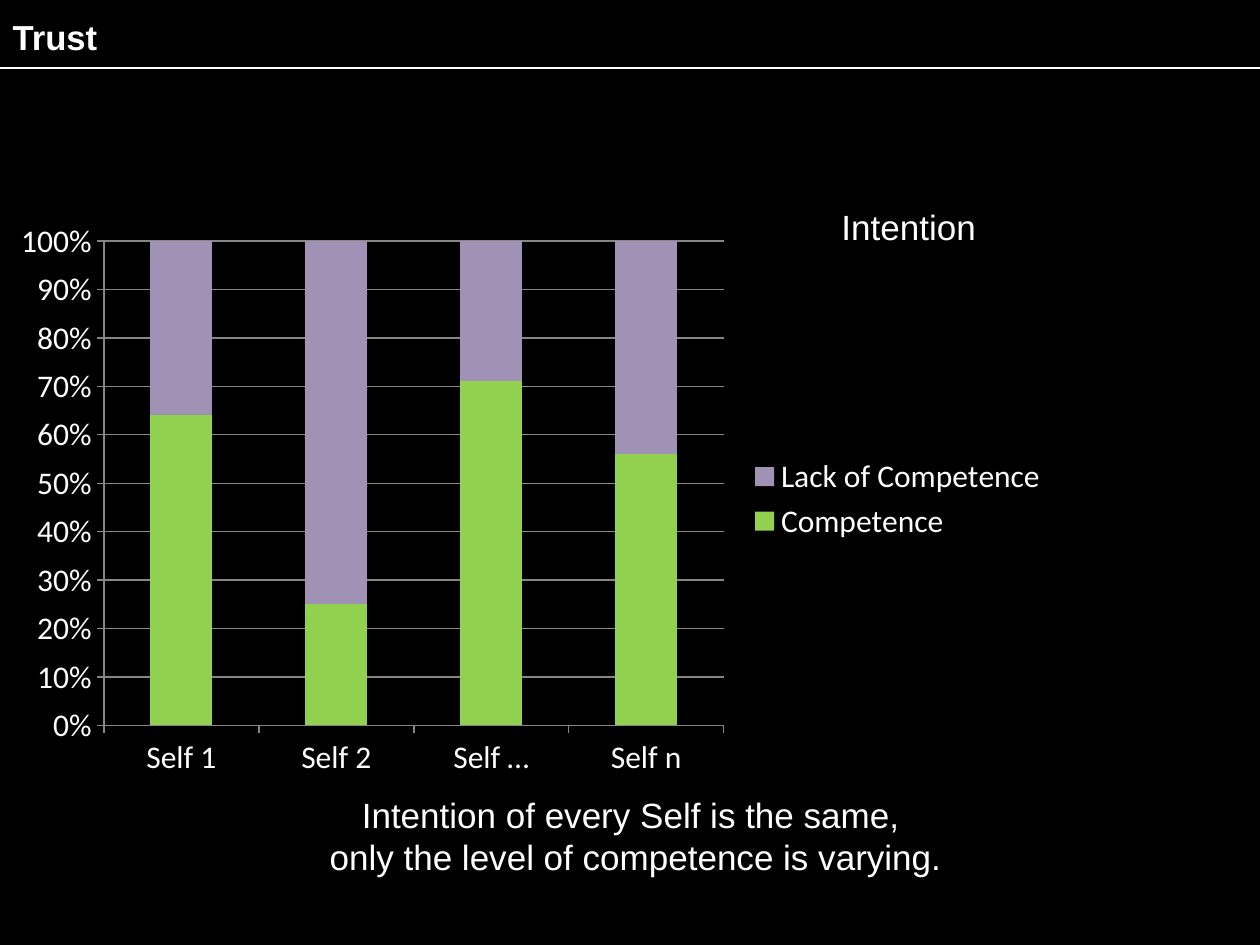
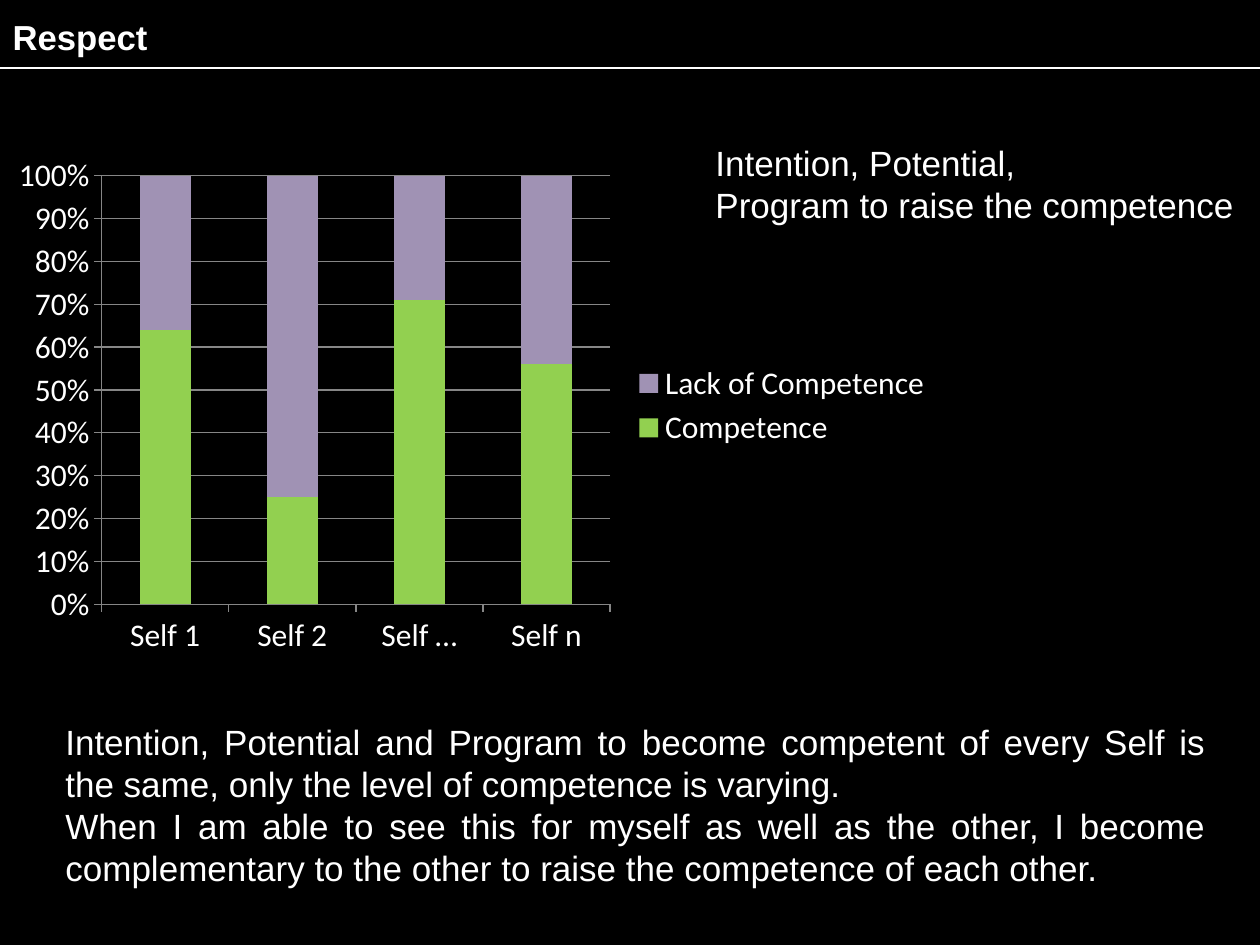
from lxml import etree
from pptx import Presentation
from pptx.chart.data import CategoryChartData
from pptx.dml.color import RGBColor
from pptx.enum import chart as charts, shapes, text
from pptx.oxml.ns import qn
from pptx.util import Inches, Pt

BLACK, WHITE, GREY = "000000", "FFFFFF", "868686"
LEFT, CENTER, JUSTIFY = text.PP_ALIGN.LEFT, text.PP_ALIGN.CENTER, text.PP_ALIGN.JUSTIFY
TITLE_ONLY = 5
TITLE_BOX = (0, 0.08, 10, 0.42)
RULE_TOP = 0.54

SELVES = ["Self 1", "Self 2", "Self …", "Self n"]
COMPETENCE = [64, 25, 71, 56]
SERIES = [
    ("Competence", COMPETENCE, "92D050"),
    ("Lack of Competence", [100 - value for value in COMPETENCE], "A092B4"),
]

SLIDES = [
    {
        "title": "Trust",
        "chart_box": (0, 1.67, 8.42, 4.58),
        "label": ["Intention"],
        "label_box": (6.58, 1.58, 1.28, 0.44),
        "message": [
            "Intention of every Self is the same, ",
            "only the level of competence is varying.",
        ],
        "message_box": (0.42, 6.25, 9.25, 0.77),
        "message_align": CENTER,
    },
    {
        "title": "Respect",
        "chart_box": (0, 1.16, 7.5, 4.12),
        "label": ["Intention, Potential,", "Program to raise the competence"],
        "label_box": (5.58, 1.07, 4.34, 1.11),
        "message": [
            "Intention, Potential and Program to become competent of every Self is "
            "the same, only the level of competence is varying. ",
            "When I am able to see this for myself as well as the other, I become "
            "complementary to the other to raise the competence of each other.",
        ],
        "message_box": (0.42, 5.67, 9.25, 1.45),
        "message_align": JUSTIFY,
    },
]


def color(value):
    """Turn a hex string into a colour."""
    return RGBColor.from_string(value)


def inches(box):
    """Turn a box of numbers into lengths."""
    return [Inches(number) for number in box]


def write(shape, lines, size=20, bold=False, align=LEFT, wrap=True, anchor=text.MSO_ANCHOR.TOP):
    """Fill a shape with one formatted paragraph per line."""
    frame = shape.text_frame
    frame.text = "\n".join(lines)
    frame.word_wrap = wrap
    frame.vertical_anchor = anchor
    for paragraph in frame.paragraphs:
        paragraph.alignment = align
        font = paragraph.runs[0].font
        font.name, font.size, font.bold = "Arial", Pt(size), bold
        font.color.rgb = color(WHITE)


def add_text(slide, box, lines, **style):
    """Add a text box that grows with its text."""
    shape = slide.shapes.add_textbox(*inches(box))
    write(shape, lines, **style)
    shape.text_frame.auto_size = text.MSO_AUTO_SIZE.SHAPE_TO_FIT_TEXT


def add_header(slide, title):
    """Place the title and the rule below it."""
    shape = slide.shapes.title
    shape.left, shape.top, shape.width, shape.height = inches(TITLE_BOX)
    write(shape, [title], size=19.8, bold=True, anchor=text.MSO_ANCHOR.MIDDLE)
    rule = slide.shapes.add_connector(
        shapes.MSO_CONNECTOR.STRAIGHT, *inches((0, RULE_TOP, 10, RULE_TOP)))
    rule.line.color.rgb = color(WHITE)
    rule.line.width = Pt(0.75)
    etree.SubElement(rule.element.spPr, qn("a:effectLst"))


def add_competence_chart(slide, box):
    """Add the stacked columns of competence for every Self."""
    data = CategoryChartData()
    data.categories = SELVES
    for name, values, _ in SERIES:
        data.add_series(name, values)
    chart = slide.shapes.add_chart(
        charts.XL_CHART_TYPE.COLUMN_STACKED_100, *inches(box), data).chart
    chart.has_title = False
    chart.font.name, chart.font.size = "Calibri", Pt(18)
    chart.font.color.rgb = color(WHITE)
    chart.has_legend = True
    chart.legend.position = charts.XL_LEGEND_POSITION.RIGHT
    chart.legend.include_in_layout = False

    plot = chart.plots[0]
    plot.gap_width, plot.overlap, plot.vary_by_categories = 150, 100, False
    for series, (_, _, fill) in zip(plot.series, SERIES):
        series.format.fill.solid()
        series.format.fill.fore_color.rgb = color(fill)

    value_axis = chart.value_axis
    value_axis.has_major_gridlines = True
    value_axis.tick_labels.number_format = "0%"
    value_axis.tick_labels.number_format_is_linked = False
    for axis in (chart.category_axis, value_axis):
        axis.major_tick_mark = charts.XL_TICK_MARK.OUTSIDE
    for lines in (chart.category_axis, value_axis, value_axis.major_gridlines):
        lines.format.line.color.rgb = color(GREY)
        lines.format.line.width = Pt(0.75)


def main():
    """Build the presentation."""
    presentation = Presentation()
    presentation.slide_width, presentation.slide_height = Inches(10), Inches(7.5)
    background = presentation.slide_master.background.fill
    background.solid()
    background.fore_color.rgb = color(BLACK)
    for content in SLIDES:
        slide = presentation.slides.add_slide(presentation.slide_layouts[TITLE_ONLY])
        add_header(slide, content["title"])
        add_competence_chart(slide, content["chart_box"])
        add_text(slide, content["label_box"], content["label"], wrap=False)
        add_text(slide, content["message_box"], content["message"],
                 align=content["message_align"])
    presentation.save("out.pptx")


if __name__ == "__main__":
    main()
